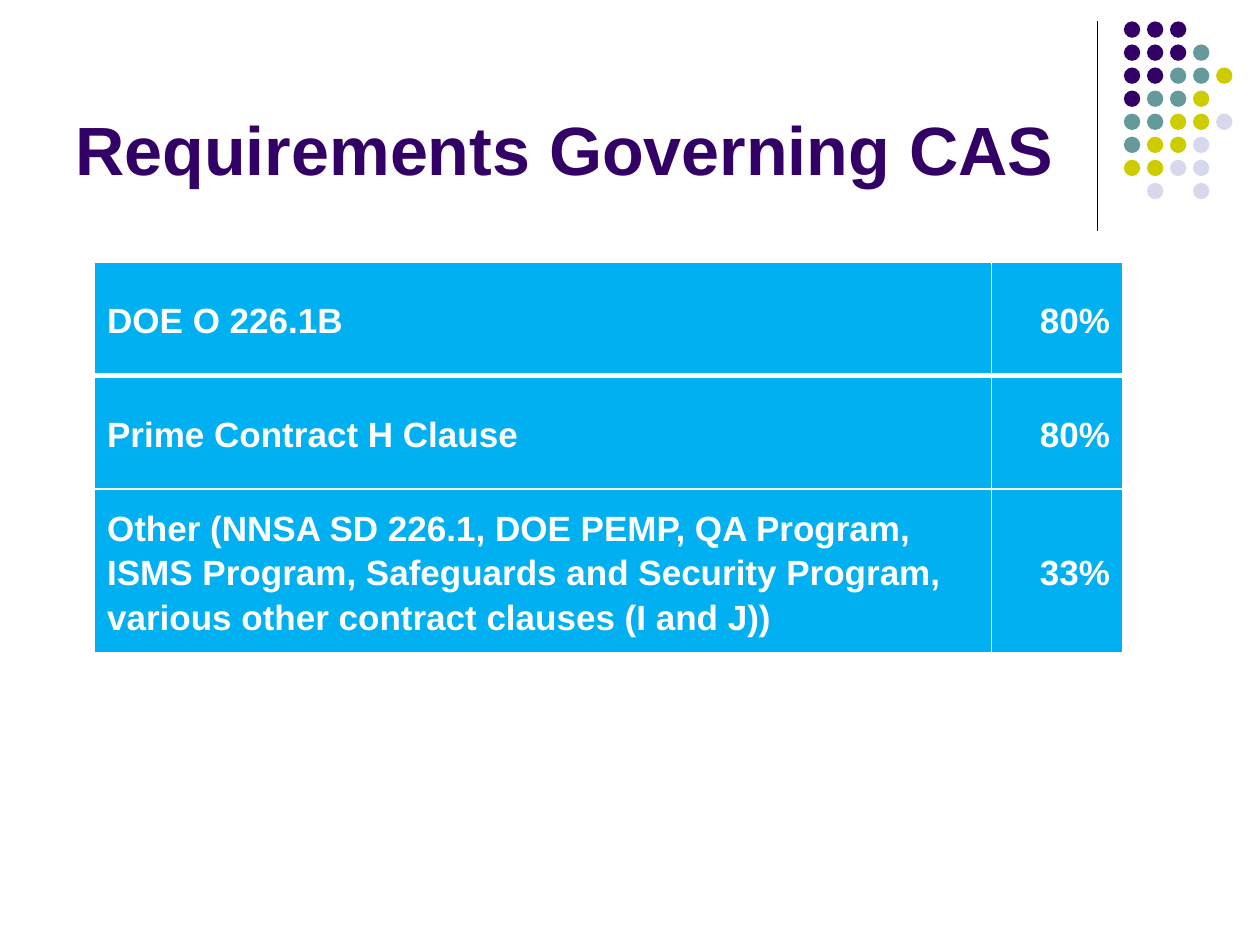
from lxml import etree
from pptx import Presentation
from pptx.dml.color import RGBColor
from pptx.enum.shapes import MSO_CONNECTOR, MSO_SHAPE
from pptx.enum.text import MSO_ANCHOR, PP_ALIGN
from pptx.oxml.ns import qn
from pptx.util import Inches, Pt

FONT = "Arial"
PURPLE, WHITE, SKY_BLUE = "330066", "FFFFFF", "00B0F0"
DOT_COLORS = {"P": PURPLE, "T": "669999", "Y": "CCCC00", "L": "D8D8EC"}
DOT_ROWS = ["PPP", "PPPT", "PPTTY", "PTTY", "TTYYL", "TYYL", "YYLL", " L L"]
DOT_PITCH, DOT_SIZE = 0.183, 0.13

REQUIREMENTS = [
    ("DOE O 226.1B", "80%"),
    ("Prime Contract H Clause", "80%"),
    ("Other (NNSA SD 226.1, DOE PEMP, QA Program, ISMS Program, "
     "Safeguards and Security Program, various other contract clauses (I and J))", "33%"),
]
COLUMN_WIDTHS = [7.12, 1.04]
ROW_HEIGHTS = [0.9, 0.9, 1.3]


def color(hex_value):
    return RGBColor.from_string(hex_value)


def style_text(paragraph, size, hex_value):
    font = paragraph.font
    font.name, font.size, font.bold = FONT, Pt(size), True
    font.color.rgb = color(hex_value)


def add_divider(slide, left, top, height):
    line = slide.shapes.add_connector(
        MSO_CONNECTOR.STRAIGHT, Inches(left), Inches(top), Inches(left), Inches(top + height))
    line.line.color.rgb = color("000000")
    line.line.width = Pt(0.75)
    etree.SubElement(line._element.spPr, qn("a:effectLst"))


def add_dot_pattern(slide, left, top):
    group = slide.shapes.add_group_shape()
    for row, codes in enumerate(DOT_ROWS):
        for column, code in enumerate(codes):
            if code == " ":
                continue
            dot = group.shapes.add_shape(
                MSO_SHAPE.OVAL, Inches(left + column * DOT_PITCH),
                Inches(top + row * DOT_PITCH), Inches(DOT_SIZE), Inches(DOT_SIZE))
            dot.shadow.inherit = False
            dot.fill.solid()
            dot.fill.fore_color.rgb = color(DOT_COLORS[code])
            dot.line.fill.background()


def add_title(slide, left, top, width, height):
    box = slide.shapes.add_textbox(Inches(left), Inches(top), Inches(width), Inches(height))
    frame = box.text_frame
    frame.word_wrap = True
    frame.vertical_anchor = MSO_ANCHOR.BOTTOM
    paragraph = frame.paragraphs[0]
    paragraph.text = "Requirements Governing CAS"
    style_text(paragraph, 39, PURPLE)


def set_borders(cell, widths):
    """Draw white cell borders; widths maps L, R, T and B to points."""
    properties = cell._tc.get_or_add_tcPr()
    for side in "LRTB":
        border = etree.SubElement(properties, qn(f"a:ln{side}"), w=str(Pt(widths[side])))
        fill = etree.SubElement(border, qn("a:solidFill"))
        etree.SubElement(fill, qn("a:srgbClr"), val=WHITE)


def add_requirements_table(slide, left, top):
    frame = slide.shapes.add_table(
        len(ROW_HEIGHTS), len(COLUMN_WIDTHS), Inches(left), Inches(top),
        Inches(sum(COLUMN_WIDTHS)), Inches(sum(ROW_HEIGHTS)))
    table = frame.table
    for column, width in zip(table.columns, COLUMN_WIDTHS):
        column.width = Inches(width)
    for row, height in zip(table.rows, ROW_HEIGHTS):
        row.height = Inches(height)
    for row_index, texts in enumerate(REQUIREMENTS):
        for column_index, text in enumerate(texts):
            cell = table.cell(row_index, column_index)
            set_borders(cell, {"L": 1, "R": 1, "T": 3 if row_index == 1 else 1,
                               "B": 3 if row_index == 0 else 1})
            cell.fill.solid()
            cell.fill.fore_color.rgb = color(SKY_BLUE)
            cell.vertical_anchor = MSO_ANCHOR.MIDDLE
            paragraph = cell.text_frame.paragraphs[0]
            paragraph.text = text
            paragraph.line_spacing = 1.15
            paragraph.alignment = PP_ALIGN.RIGHT if column_index == 1 else PP_ALIGN.LEFT
            style_text(paragraph, 20, WHITE)


def main():
    presentation = Presentation()
    presentation.slide_width = Inches(10)
    presentation.slide_height = Inches(7.5)
    slide = presentation.slides.add_slide(presentation.slide_layouts[6])
    add_divider(slide, 8.71, 0.17, 1.66)
    add_dot_pattern(slide, 8.92, 0.17)
    add_title(slide, 0.5, 0.13, 8.25, 1.42)
    add_requirements_table(slide, 0.75, 2.08)
    presentation.save("out.pptx")


if __name__ == "__main__":
    main()
